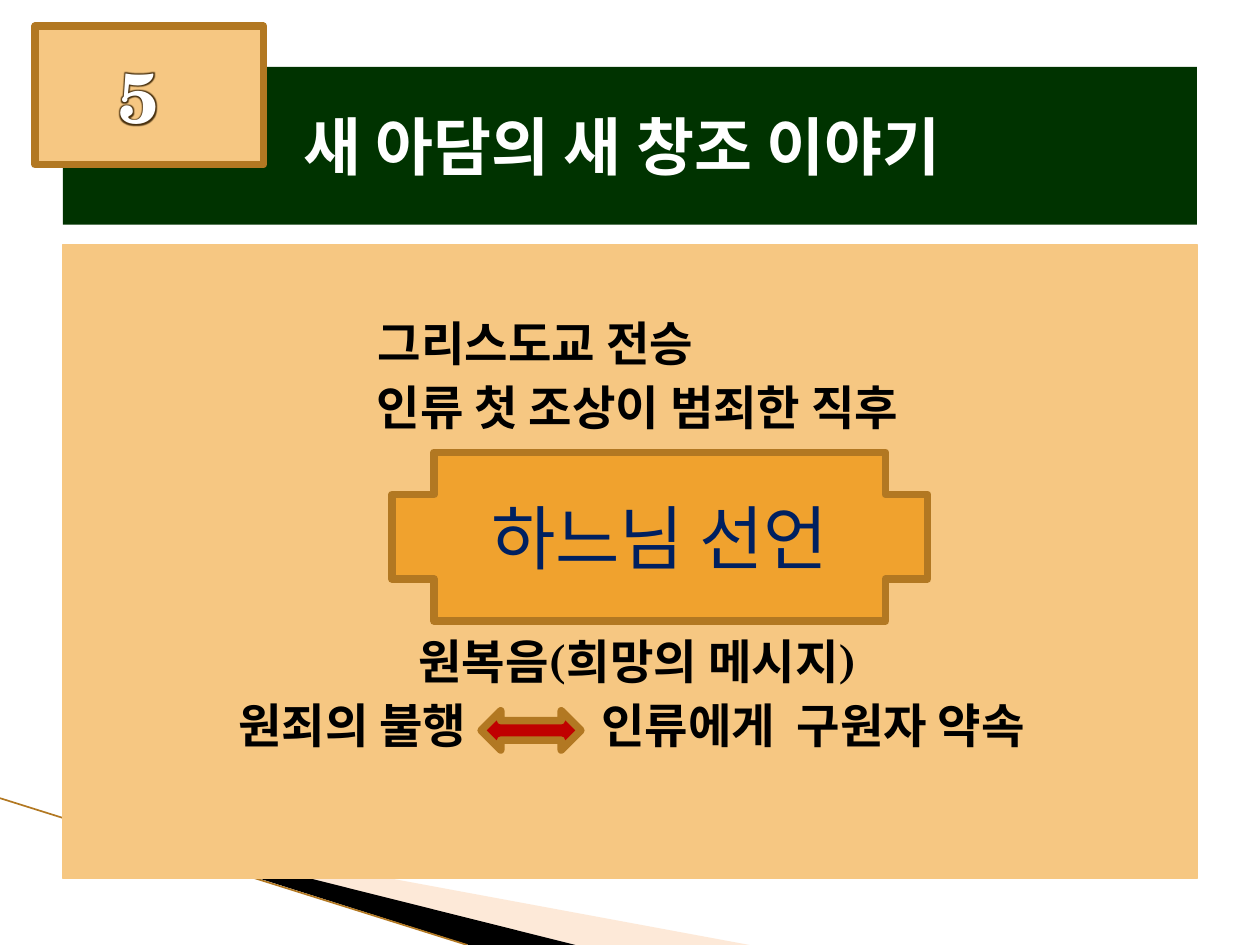
from lxml import etree
from pptx import Presentation
from pptx import util as u
from pptx.dml.color import RGBColor
from pptx.enum import shapes, text
from pptx.oxml import ns

COLORS = {
    "sand": "F6C782", "amber": "F0A22E", "bronze": "B27822", "green": "003300",
    "peach": "FBC99E", "red": "C00000", "navy": "002060", "black": "000000",
    "white": "FFFFFF", "umber": "4A3210",
}
LEFT, CENTER = text.PP_ALIGN.LEFT, text.PP_ALIGN.CENTER
SHAPE = shapes.MSO_SHAPE


class SlideBuilder:
    """Holds the style and the slide being drawn."""

    font = "TeX Gyre Schola"
    border = 4.33

    def __init__(self, slide):
        self.slide = slide

    def color(self, name):
        return RGBColor.from_string(COLORS[name])

    def paint(self, shape, fill, line=None, width=border):
        shape.shadow.inherit = False
        shape.fill.solid()
        shape.fill.fore_color.rgb = self.color(fill)
        if line:
            shape.line.color.rgb = self.color(line)
            shape.line.width = u.Pt(width)
            etree.SubElement(shape.line._get_or_add_ln(), ns.qn("a:round"))
        else:
            shape.line.fill.background()

    def streak(self, points, fill, alpha=None):
        corners = [(u.Cm(x), u.Cm(y)) for x, y in points]
        outline = self.slide.shapes.build_freeform(*corners[0])
        outline.add_line_segments(corners[1:])
        shape = outline.convert_to_shape()
        self.paint(shape, fill)
        if alpha:
            tone = shape._element.spPr.find(".//" + ns.qn("a:srgbClr"))
            etree.SubElement(tone, ns.qn("a:alpha")).set("val", str(alpha * 1000))

    def hairline(self, start, end, color, width):
        ends = [u.Cm(v) for v in (*start, *end)]
        line = self.slide.shapes.add_connector(shapes.MSO_CONNECTOR.STRAIGHT, *ends)
        line.line.color.rgb = self.color(color)
        line.line.width = u.Pt(width)
        etree.SubElement(line._element.spPr, ns.qn("a:effectLst"))

    def panel(self, kind, box, fill, line=None, width=border):
        shape = self.slide.shapes.add_shape(kind, *[u.Cm(v) for v in box])
        self.paint(shape, fill, line, width)
        frame = shape.text_frame
        frame.word_wrap = True
        frame.vertical_anchor = text.MSO_ANCHOR.MIDDLE
        return frame

    def add_words(self, paragraph, words, size, color, bold=True, align=CENTER,
                  before=0, indent=0, tabs=()):
        props = paragraph._p.get_or_add_pPr()
        props.set("marL", str(u.Cm(indent)))
        if tabs:
            stops = etree.SubElement(props, ns.qn("a:tabLst"))
            for stop in tabs:
                etree.SubElement(stops, ns.qn("a:tab"), pos=str(u.Cm(stop)), algn="l")
        paragraph.alignment = align
        paragraph.space_before = u.Pt(before)
        run = paragraph.add_run()
        run.text = words
        run.font.name = self.font
        run.font.size = u.Pt(size)
        run.font.bold = bold
        run.font.color.rgb = self.color(color)
        return run

    def glow(self, run, color, radius):
        effects = etree.Element(ns.qn("a:effectLst"))
        halo = etree.SubElement(effects, ns.qn("a:glow"), rad=str(u.Pt(radius)))
        etree.SubElement(halo, ns.qn("a:srgbClr"), val=COLORS[color])
        run._r.get_or_add_rPr().find(ns.qn("a:solidFill")).addnext(effects)


def main():
    deck = Presentation()
    deck.slide_width, deck.slide_height = u.Cm(25.4), u.Cm(19.05)
    page = SlideBuilder(deck.slides.add_slide(deck.slide_layouts[6]))

    page.streak([(1.4, 16.51), (15.11, 19.05), (11.58, 19.05)], "peach", 40)
    page.streak([(1.35, 16.48), (11.6, 19.05), (9.45, 19.05)], "black")
    page.hairline((0, 16.09), (9.42, 19.05), "bronze", 0.95)

    story = page.panel(SHAPE.RECTANGLE, (1.27, 4.93, 22.86, 12.78), "sand", "sand", 0.75)
    story.vertical_anchor = text.MSO_ANCHOR.TOP
    story.margin_top = u.Cm(1.41)
    lines = [
        ("그리스도교 전승", dict(align=LEFT, indent=6.1)),
        ("인류 첫 조상이 범죄한 직후", dict(before=4, indent=0.3)),
        ("원복음(희망의 메시지)", dict(before=113, indent=0.3)),
        ("\t원죄의 불행\t인류에게  구원자 약속",
         dict(before=4, align=LEFT, tabs=(3.28, 10.6))),
    ]
    for number, (words, layout) in enumerate(lines):
        paragraph = story.add_paragraph() if number else story.paragraphs[0]
        page.add_words(paragraph, words, 27, "black", **layout)

    title = page.panel(SHAPE.RECTANGLE, (1.27, 1.35, 22.86, 3.18), "green")
    title.margin_left = u.Cm(4.85)
    page.add_words(title.paragraphs[0], "새 아담의 새 창조 이야기", 36, "white", align=LEFT)

    proclamation = page.panel(SHAPE.CROSS, (7.9, 9.12, 10.8, 3.4), "amber", "bronze")
    page.add_words(proclamation.paragraphs[0], "하느님 선언", 40, "navy", bold=False)

    page.panel(SHAPE.LEFT_RIGHT_ARROW, (9.7, 14.33, 2.01, 0.79), "red", "bronze")

    chapter = page.panel(SHAPE.RECTANGLE, (0.71, 0.53, 4.6, 2.79), "sand", "bronze")
    chapter.margin_right = u.Cm(0.7)
    numeral = page.add_words(chapter.paragraphs[0], "5", 40, "white")
    page.glow(numeral, "umber", 3)

    deck.save("out.pptx")


if __name__ == "__main__":
    main()
